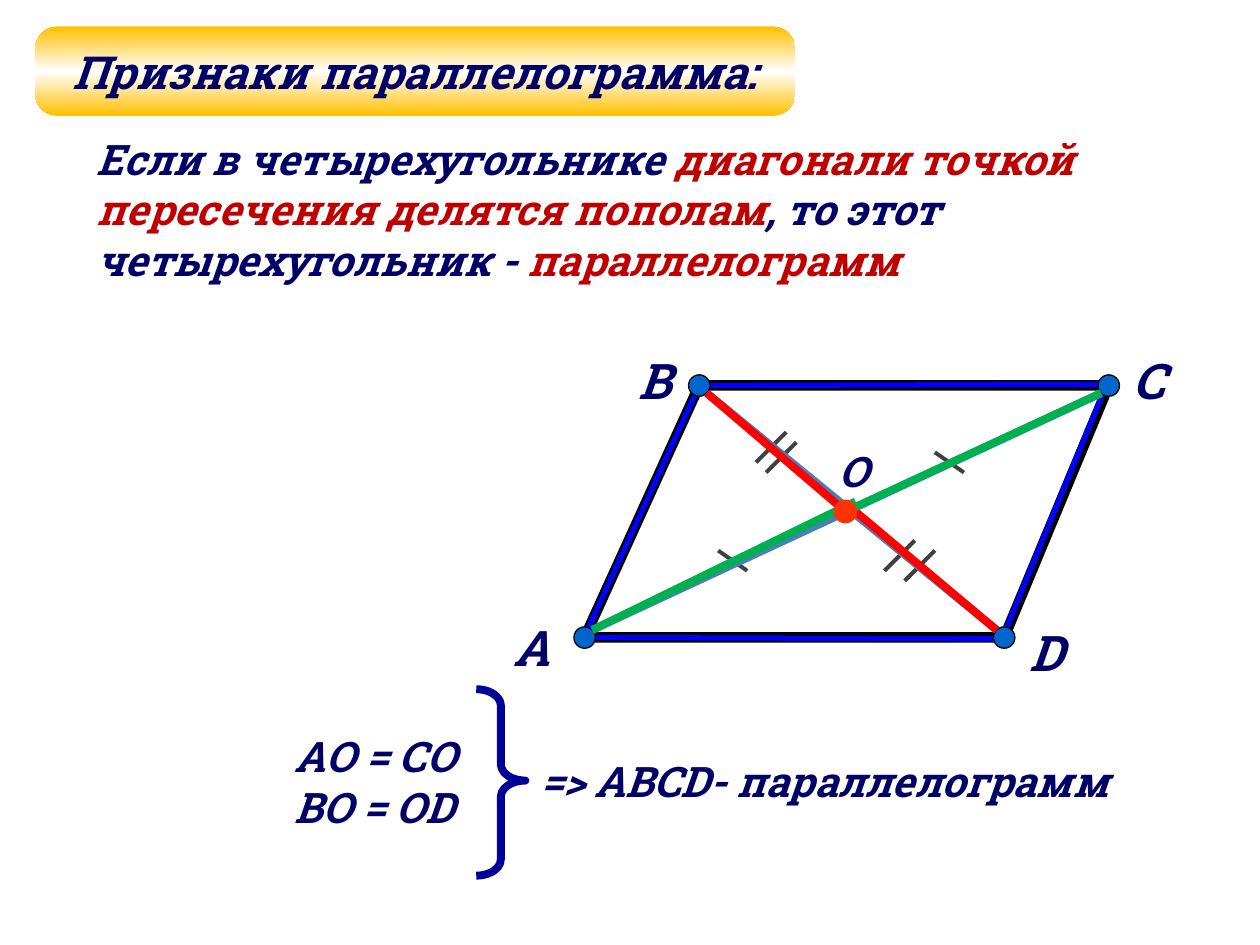
from copy import deepcopy

from lxml import etree
from pptx import Presentation
from pptx.dml.color import RGBColor
from pptx.enum.shapes import MSO_CONNECTOR, MSO_SHAPE
from pptx.enum.text import MSO_ANCHOR, MSO_AUTO_SIZE, PP_ALIGN
from pptx.oxml.ns import qn
from pptx.util import Inches, Pt

STRAIGHT = MSO_CONNECTOR.STRAIGHT
OVAL, ROUNDED, BRACE = MSO_SHAPE.OVAL, MSO_SHAPE.ROUNDED_RECTANGLE, MSO_SHAPE.RIGHT_BRACE
MIDDLE, TOP = MSO_ANCHOR.MIDDLE, MSO_ANCHOR.TOP

FONT = "Roboto Slab"
NAVY = RGBColor(0x00, 0x00, 0x66)
CRIMSON = RGBColor(0xC0, 0x00, 0x00)
BRACE_BLUE = RGBColor(0x00, 0x00, 0x99)
SIDE_BLUE = RGBColor(0x00, 0x00, 0xFF)
VERTEX_BLUE = RGBColor(0x00, 0x66, 0xCC)
DIAGONAL_BLUE = RGBColor(0x4B, 0x7E, 0xBC)
TICK_GREY = RGBColor(0x40, 0x40, 0x40)
BLACK = RGBColor(0x00, 0x00, 0x00)
WHITE = RGBColor(0xFF, 0xFF, 0xFF)
RED = RGBColor(0xFF, 0x00, 0x00)
GREEN = RGBColor(0x00, 0xB0, 0x50)
ORANGE = RGBColor(0xFF, 0x33, 0x00)
GOLD = RGBColor(0xFF, 0xC0, 0x00)

# Content: texts are lists of paragraphs, each a list of (words, colour)
TITLE = [[("Признаки параллелограмма:", NAVY)]]
THEOREM = [[
    ("Если в четырехугольнике ", NAVY),
    ("диагонали точкой пересечения делятся пополам", CRIMSON),
    (", то этот четырехугольник - ", NAVY),
    ("параллелограмм", CRIMSON),
]]
GIVEN = [[("AО = CО", NAVY)], [("ВО = ОD", NAVY)]]
CONCLUSION = [[("=> ABCD- параллелограмм", NAVY)]]

# Vertex label: (vertex centre, label left and top)
VERTICES = {
    "А": ((4.64, 5.06), (3.98, 4.85)),
    "В": ((5.55, 3.06), (4.97, 2.73)),
    "С": ((8.80, 3.06), (8.89, 2.73)),
    "D": ((7.97, 5.06), (8.07, 4.89)),
}
SIDES = [
    ((5.55, 3.06), (8.78, 3.05)),
    ((8.78, 3.06), (7.97, 5.03)),
    ((5.55, 3.06), (4.64, 5.05)),
    ((4.64, 5.06), (7.97, 5.07)),
]
A_END, B_END, C_END, D_END = (4.7, 5), (5.61, 3.12), (8.74, 3.12), (7.91, 5)
DIAGONALS = [
    (B_END, D_END, DIAGONAL_BLUE),
    (A_END, C_END, DIAGONAL_BLUE),
    ((6.79, 4.06), D_END, RED),
    (B_END, (6.71, 4.06), RED),
    ((6.71, 4.06), C_END, GREEN),
    (A_END, (6.79, 3.98), GREEN),
]
# Equal-length marks: start points sharing one direction
SINGLE_TICKS, SINGLE_STEP = [(5.70, 4.37), (7.42, 3.59)], (0.23, 0.16)
DOUBLE_TICKS = [(7.42, 4.37), (7.26, 4.29), (6.24, 3.43), (6.32, 3.51)]
DOUBLE_STEP = (-0.24, 0.24)
CENTRE, CENTRE_SIZE, VERTEX_SIZE = (6.71, 4.06), 0.16, 0.17
TITLE_BOX = (0.28, 0.21, 6.03, 0.71)

prs = Presentation()
prs.slide_width, prs.slide_height = Inches(10), Inches(7.5)
slide = prs.slides.add_slide(prs.slide_layouts[5])
shapes = slide.shapes


def inches(values):
    return [Inches(value) for value in values]


def write(shape, paragraphs, size, wrap=True, anchor=TOP, align=PP_ALIGN.LEFT):
    frame = shape.text_frame
    frame.word_wrap = wrap
    frame.auto_size = MSO_AUTO_SIZE.NONE
    frame.vertical_anchor = anchor
    for index, pieces in enumerate(paragraphs):
        paragraph = frame.add_paragraph() if index else frame.paragraphs[0]
        paragraph.alignment = align
        for words, colour in pieces:
            run = paragraph.add_run()
            run.text = words
            font = run.font
            font.name, font.size = FONT, Pt(size)
            font.bold = font.italic = True
            font.color.rgb = colour


def add_text(box, paragraphs, size=24, wrap=True):
    write(shapes.add_textbox(*inches(box)), paragraphs, size, wrap)


def add_line(start, end, colour, width):
    line = shapes.add_connector(STRAIGHT, *inches(start + end))
    line.line.color.rgb, line.line.width = colour, Pt(width)
    etree.SubElement(line.element.spPr, qn("a:effectLst"))


def add_dot(centre, size, fill, outline, width):
    left, top = (value - size / 2 for value in centre)
    dot = shapes.add_shape(OVAL, *inches((left, top, size, size)))
    dot.shadow.inherit = False
    dot.fill.solid()
    dot.fill.fore_color.rgb = fill
    dot.line.color.rgb, dot.line.width = outline, Pt(width)


# Title on its gold plate
plate = shapes.add_shape(ROUNDED, *inches(TITLE_BOX))
plate.adjustments[0] = 0.25
plate.shadow.inherit = False
plate.line.fill.background()
plate.fill.gradient()
plate.fill.gradient_angle = 90
stop_list = plate.element.spPr.find(".//" + qn("a:gsLst"))
stop_list.append(deepcopy(stop_list[0]))
for stop, position, colour in zip(plate.fill.gradient_stops, (0, 0.5, 1), (GOLD, WHITE, GOLD)):
    stop.position, stop.color.rgb = position, colour
title = shapes.title
title.left, title.top, title.width, title.height = inches(TITLE_BOX)
write(title, TITLE, 26, wrap=False, anchor=MIDDLE, align=PP_ALIGN.CENTER)
plate.element.addnext(title.element)

# Theorem, premises and conclusion
add_text((0.67, 1.01, 8.53, 1.31), THEOREM)
add_text((2.24, 5.75, 2.73, 0.91), GIVEN)
add_text((4.19, 5.95, 5.15, 0.5), CONCLUSION)
brace = shapes.add_shape(BRACE, *inches((3.78, 5.47, 0.39, 1.48)))
brace.adjustments[0], brace.adjustments[1] = 0.33, 0.49
brace.shadow.inherit = False
brace.fill.background()
brace.line.color.rgb, brace.line.width = BRACE_BLUE, Pt(4.5)

# Parallelogram
for ticks, (dx, dy) in ((SINGLE_TICKS, SINGLE_STEP), (DOUBLE_TICKS, DOUBLE_STEP)):
    for x, y in ticks:
        add_line((x, y), (x + dx, y + dy), TICK_GREY, 2.25)

corners = [inches(centre) for centre, _ in VERTICES.values()]
builder = shapes.build_freeform(*corners[0])
builder.add_line_segments(corners[1:], close=True)
outline = builder.convert_to_shape()
outline.shadow.inherit = False
outline.fill.background()
outline.line.color.rgb, outline.line.width = BLACK, Pt(6)

for start, end in SIDES:
    add_line(start, end, SIDE_BLUE, 3)
for letter, (centre, label_corner) in VERTICES.items():
    add_dot(centre, VERTEX_SIZE, VERTEX_BLUE, BLACK, 0.75)
    add_text(label_corner + (0.5, 0.57), [[(letter, NAVY)]], 28, wrap=False)
for start, end, colour in DIAGONALS:
    add_line(start, end, colour, 4.5)
add_text((6.56, 3.49, 0.47, 0.51), [[("O", NAVY)]])
add_dot(CENTRE, CENTRE_SIZE, ORANGE, ORANGE, 2)

prs.save("out.pptx")
